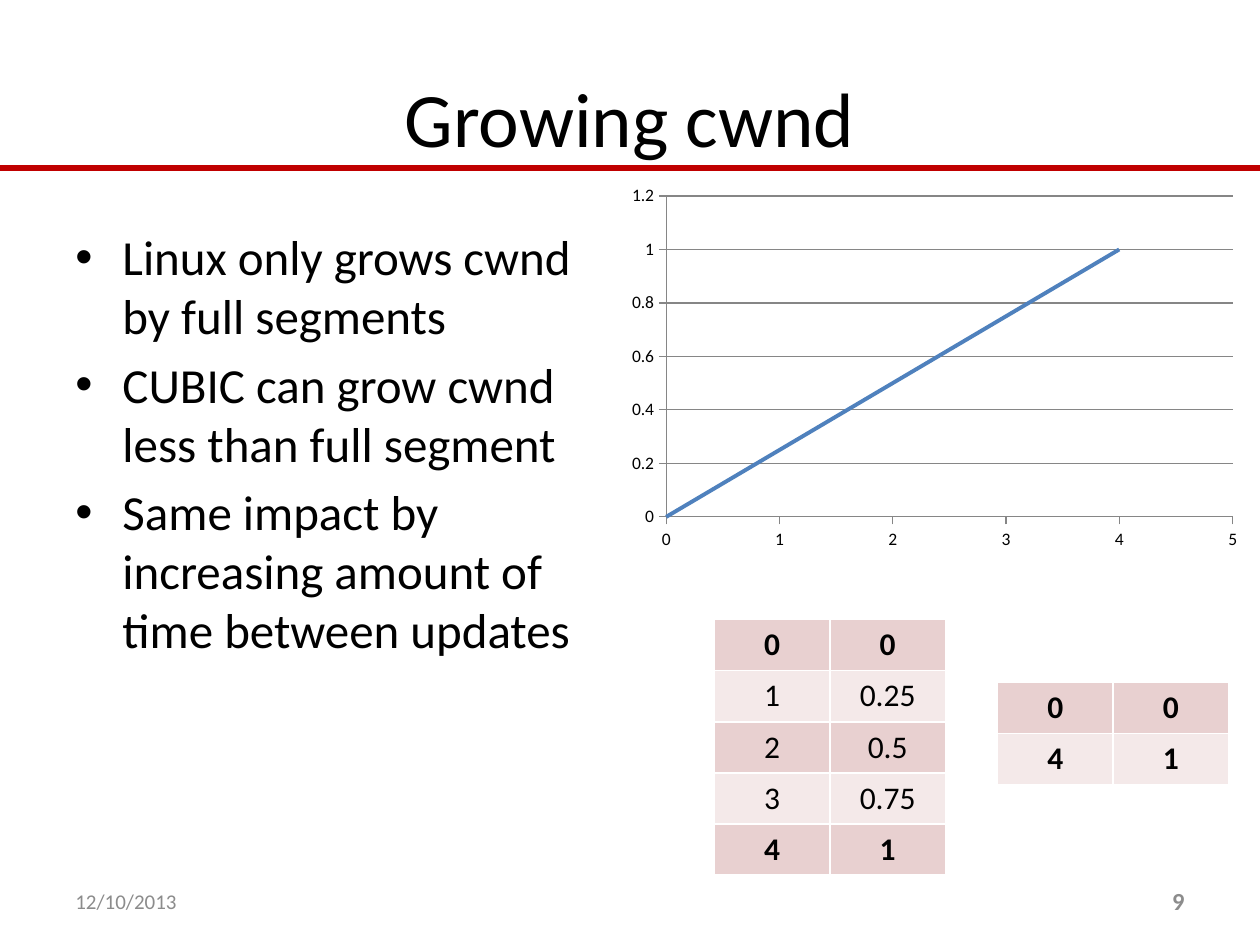
"""Build the "Growing cwnd" slide with bullets, a scatter chart and two tables."""
from lxml import etree
from pptx import Presentation
from pptx import util as u
from pptx.chart import data
from pptx.dml import color
from pptx.enum import chart as ch, shapes, text
from pptx.oxml import ns

COLORS = {
    "red": "C00000", "black": "000000", "gray": "8C8C8C", "axis": "868686",
    "blue": "4F81BD", "white": "FFFFFF", "dark": "E8D0D0", "light": "F4E9E9",
}
RGB = {name: color.RGBColor.from_string(c) for name, c in COLORS.items()}
ALIGN = text.PP_ALIGN
ANCHOR = text.MSO_ANCHOR


def write(tf, txt, size=18, fill="black", bold=False, align=ALIGN.LEFT,
          bullet=False, anchor=ANCHOR.TOP):
    """Write one paragraph per line of txt into a text frame."""
    tf.word_wrap = True
    tf.vertical_anchor = anchor
    for i, line in enumerate(txt.split("\n")):
        p = tf.paragraphs[0] if i == 0 else tf.add_paragraph()
        p.alignment = align
        if bullet:
            pPr = p._p.get_or_add_pPr()
            pPr.set("marL", str(u.Cm(0.95)))
            pPr.set("indent", str(-u.Cm(0.95)))
            etree.SubElement(pPr, ns.qn("a:buFont"), typeface="Arial")
            etree.SubElement(pPr, ns.qn("a:buChar"), char="•")
            if i:
                p.space_before = u.Pt(size * 0.2)
        r = p.add_run()
        r.text = line
        r.font.name = "Calibri"
        r.font.size = u.Pt(size)
        r.font.bold = bold
        r.font.color.rgb = RGB[fill]


prs = Presentation()
prs.slide_width, prs.slide_height = u.Cm(25.4), u.Cm(19.05)
s = prs.slides.add_slide(prs.slide_layouts[6])

rule = s.shapes.add_connector(
    shapes.MSO_CONNECTOR.STRAIGHT, 0, u.Cm(3.38), prs.slide_width, u.Cm(3.38))
rule.line.color.rgb = RGB["red"]
rule.line.width = u.Pt(3.25)
etree.SubElement(rule._element.spPr, ns.qn("a:effectLst"))

bullets = """Linux only grows cwnd by full segments
CUBIC can grow cwnd less than full segment
Same impact by increasing amount of time between updates"""
boxes = [
    ((1.27, 0.76, 22.86, 3.18), "Growing cwnd",
     dict(size=44, align=ALIGN.CENTER, anchor=ANCHOR.MIDDLE)),
    ((1.27, 4.45, 11.23, 12.57), bullets, dict(size=28, bullet=True)),
    ((1.27, 17.65, 5.92, 1.02), "12/10/2013",
     dict(size=12, fill="gray", anchor=ANCHOR.MIDDLE)),
    ((18.21, 17.65, 5.92, 1.02), "9",
     dict(size=14, fill="gray", bold=True, align=ALIGN.RIGHT, anchor=ANCHOR.MIDDLE)),
]
for at, txt, fmt in boxes:
    write(s.shapes.add_textbox(*map(u.Cm, at)).text_frame, txt, **fmt)

points = [(x, x / 4) for x in range(5)]
cd = data.XyChartData()
series = cd.add_series("Series 1")
for x, y in points:
    series.add_data_point(x, y)
chart = s.shapes.add_chart(
    ch.XL_CHART_TYPE.XY_SCATTER_LINES_NO_MARKERS,
    u.Cm(12.49), u.Cm(3.6), u.Cm(12.7), u.Cm(7.62), cd).chart
chart.has_legend = False
chart.has_title = False
chart.font.name = "Calibri"
chart.font.size = u.Pt(10)
chart.font.color.rgb = RGB["black"]
for axis, top, step in ((chart.category_axis, 5, 1), (chart.value_axis, 1.2, 0.2)):
    axis.minimum_scale, axis.maximum_scale, axis.major_unit = 0, top, step
    axis.major_tick_mark = ch.XL_TICK_MARK.OUTSIDE
    axis.minor_tick_mark = ch.XL_TICK_MARK.NONE
    axis.tick_labels.number_format = "General"
    axis.tick_labels.number_format_is_linked = False
    axis.format.line.color.rgb = RGB["axis"]
chart.category_axis.has_major_gridlines = False
chart.value_axis.has_major_gridlines = True
chart.value_axis.major_gridlines.format.line.color.rgb = RGB["axis"]
chart.plots[0].vary_by_categories = False
line = chart.plots[0].series[0]
line.smooth = False
line.format.line.color.rgb = RGB["blue"]
line.format.line.width = u.Pt(2.25)

ends = [points[0], points[-1]]
for left, top, rows in ((14.4, 12.49, points), (20.11, 13.76, ends)):
    table = s.shapes.add_table(
        len(rows), 2, u.Cm(left), u.Cm(top), u.Cm(4.66), u.Cm(1.03 * len(rows))).table
    for i, row in enumerate(rows):
        for j, value in enumerate(row):
            cell = table.cell(i, j)
            write(cell.text_frame, f"{value:g}", bold=row in ends, align=ALIGN.CENTER)
            tcPr = cell._tc.get_or_add_tcPr()
            for side in ("lnL", "lnR", "lnT", "lnB"):
                ln = etree.SubElement(tcPr, ns.qn(f"a:{side}"), w=str(u.Pt(1)))
                solid = etree.SubElement(ln, ns.qn("a:solidFill"))
                etree.SubElement(solid, ns.qn("a:srgbClr"), val=COLORS["white"])
            cell.fill.solid()
            cell.fill.fore_color.rgb = RGB["light" if i % 2 else "dark"]

prs.save("out.pptx")
